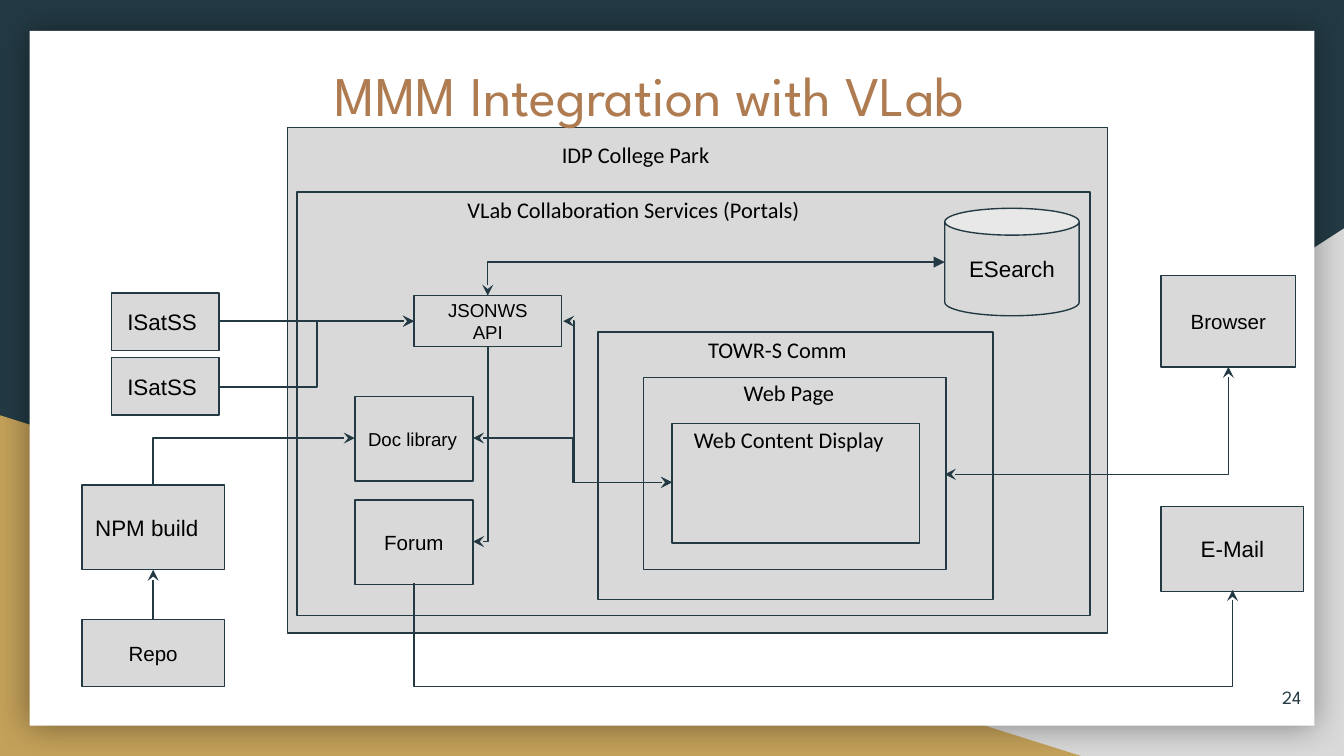
import pptx
import pptx.util
import pptx.dml.color
import pptx.enum.shapes
import pptx.enum.text
import pptx.oxml
import pptx.oxml.ns
import lxml.etree

Inches = pptx.util.Inches
SHAPE = pptx.enum.shapes.MSO_SHAPE
CONNECTOR = pptx.enum.shapes.MSO_CONNECTOR
ALIGN = pptx.enum.text.PP_ALIGN
ANCHOR = pptx.enum.text.MSO_ANCHOR
qn = pptx.oxml.ns.qn

NAVY, GREY, GOLD = "233A44", "D9D9D9", "C4A15A"
WHITE, BLACK, BRONZE = "FFFFFF", "000000", "AF7B51"


def paint(fill, color):
    fill.solid()
    fill.fore_color.rgb = pptx.dml.color.RGBColor.from_string(color)


def write(box, text, size=12, font="Arial", color=BLACK, align=ALIGN.CENTER, anchor=ANCHOR.MIDDLE):
    frame = box.text_frame
    frame.word_wrap = True
    frame.vertical_anchor = anchor
    frame.margin_left = frame.margin_right = Inches(0.1)
    frame.margin_top = frame.margin_bottom = Inches(0.1)
    for index, line in enumerate(text.split("\n")):
        para = frame.add_paragraph() if index else frame.paragraphs[0]
        para.alignment = align
        span = para.add_run()
        span.text = line
        span.font.size = pptx.util.Pt(size)
        span.font.name = font
        paint(span.font.fill, color)


deck = pptx.Presentation()
deck.slide_width = Inches(10)
deck.slide_height = Inches(10) * 9 // 16
page = deck.slides.add_slide(deck.slide_layouts[6])
paint(page.background.fill, NAVY)

backdrop = [
    (SHAPE.RIGHT_TRIANGLE, GREY, (3.92, 1.7, 6.08, 3.93)),
    (SHAPE.RIGHT_TRIANGLE, GOLD, (0, 3.09, 8.06, 2.54)),
    (SHAPE.RECTANGLE, WHITE, (0.22, 0.23, 9.56, 5.17)),
]
panels = []
for kind, color, place in backdrop:
    panel = page.shapes.add_shape(kind, *map(Inches, place))
    panel.shadow.inherit = False
    paint(panel.fill, color)
    panel.line.fill.background()
    panels.append(panel)
panels[0]._element.spPr.find(qn("a:xfrm")).set("flipH", "1")
effects = panels[2]._element.spPr.find(qn("a:effectLst"))
effects.append(pptx.oxml.parse_xml(
    '<a:outerShdw xmlns:a="http://schemas.openxmlformats.org/drawingml/2006/main" '
    'blurRad="228600" dist="0" rotWithShape="0">'
    '<a:srgbClr val="000000"><a:alpha val="40000"/></a:srgbClr></a:outerShdw>'))

boxes = [
    ("", 0, (2.14, 0.95, 6.1, 3.76)),
    ("", 0, (2.21, 1.43, 5.9, 3.15)),
    ("", 0, (4.45, 2.47, 2.94, 1.99)),
    ("", 0, (4.79, 2.81, 2.25, 1.43)),
    ("", 0, (5, 3.15, 1.84, 0.89)),
    ("ISatSS ", 12, (0.83, 2.18, 0.8, 0.43)),
    ("ISatSS ", 12, (0.83, 2.66, 0.8, 0.43)),
    ("NPM build", 12, (0.61, 3.61, 1.06, 0.63)),
    ("Repo", 11, (0.61, 4.61, 1.06, 0.5)),
    ("JSONWS\nAPI", 10, (3.08, 2.2, 1.1, 0.38)),
    ("Doc library", 10, (2.64, 2.95, 0.88, 0.63)),
    ("Forum", 11, (2.64, 3.72, 0.88, 0.63)),
    ("ESearch", 12, (7.03, 1.55, 1, 0.8)),
    ("Browser", 11, (8.64, 2.05, 1, 0.68)),
    ("E-Mail", 12, (8.64, 3.77, 1.06, 0.63)),
]
for text, size, place in boxes:
    kind = SHAPE.CAN if text == "ESearch" else SHAPE.RECTANGLE
    box = page.shapes.add_shape(kind, *map(Inches, place))
    box.shadow.inherit = False
    paint(box.fill, GREY)
    paint(box.line.fill, NAVY)
    box.line.width = pptx.util.Pt(0.75)
    if text:
        align = ALIGN.LEFT if text in ("NPM build", "Doc library") else ALIGN.CENTER
        write(box, text, size=size, align=align)

labels = [
    ("IDP College Park", (3.93, 0.95, 1.6, 0.32)),
    ("VLab Collaboration Services (Portals)", (3.38, 1.36, 2.67, 0.32)),
    ("TOWR-S Comm", (4.66, 2.4, 2.25, 0.29)),
    ("Web Page", (5.18, 2.72, 1.38, 0.38)),
    ("Web Content Display", (4.79, 3.07, 2.16, 0.38)),
]
for text, place in labels:
    label = page.shapes.add_textbox(*map(Inches, place))
    write(label, text, font="Calibri", anchor=ANCHOR.TOP)

STRAIGHT, CORNER, STEP = "line", "bentConnector2", "bentConnector3"
arrows = [
    (STRAIGHT, (1.64, 2.39, 3.08, 2.39), None, "stealth", None, 0),
    (STEP, (1.64, 2.88, 3.08, 2.39), None, "stealth", 50000, 0),
    (CORNER, (7.03, 1.95, 3.63, 2.2), "triangle", "stealth", None, 0),
    (CORNER, (7.03, 3.53, 9.14, 2.73), "stealth", "stealth", None, 0),
    (CORNER, (2.64, 3.26, 1.14, 3.61), "stealth", None, None, 0),
    (CORNER, (3.52, 4.03, 3.63, 2.58), "stealth", None, None, 0),
    (STEP, (5, 3.59, 4.19, 2.39), "stealth", "stealth", 89900, 0),
    (STEP, (5, 3.59, 3.52, 3.26), "stealth", "stealth", 50000, 0),
    (STEP, (6.15, 1.32, 6.1, 7.41), None, "stealth", 1536400, 270),
    (STRAIGHT, (1.14, 4.24, 1.14, 4.61), "stealth", None, None, 0),
]
for route, ends, head, tail, bend, turn in arrows:
    kind = CONNECTOR.STRAIGHT if route == STRAIGHT else CONNECTOR.ELBOW
    arrow = page.shapes.add_connector(kind, *map(Inches, ends))
    paint(arrow.line.fill, NAVY)
    arrow.line.width = pptx.util.Pt(0.75)
    properties = arrow._element.spPr
    geometry = properties.find(qn("a:prstGeom"))
    geometry.set("prst", route)
    if bend:
        guides = geometry.find(qn("a:avLst"))
        lxml.etree.SubElement(guides, qn("a:gd"), name="adj1", fmla=f"val {bend}")
    if turn:
        properties.find(qn("a:xfrm")).set("rot", str(turn * 60000))
    for tag, style in (("a:headEnd", head), ("a:tailEnd", tail)):
        if style:
            lxml.etree.SubElement(properties.find(qn("a:ln")), qn(tag), type=style)
    lxml.etree.SubElement(properties, qn("a:effectLst"))

title = page.shapes.add_textbox(*map(Inches, (2.39, 0.35, 5.5, 0.41)))
write(title, "MMM Integration with VLab", size=30, font="League Spartan", color=BRONZE,
      align=ALIGN.LEFT, anchor=ANCHOR.TOP)
number = page.shapes.add_textbox(*map(Inches, (9.18, 4.97, 0.6, 0.43)))
write(number, "24", size=10, font="League Spartan", color=NAVY, align=ALIGN.RIGHT)

deck.save("out.pptx")
